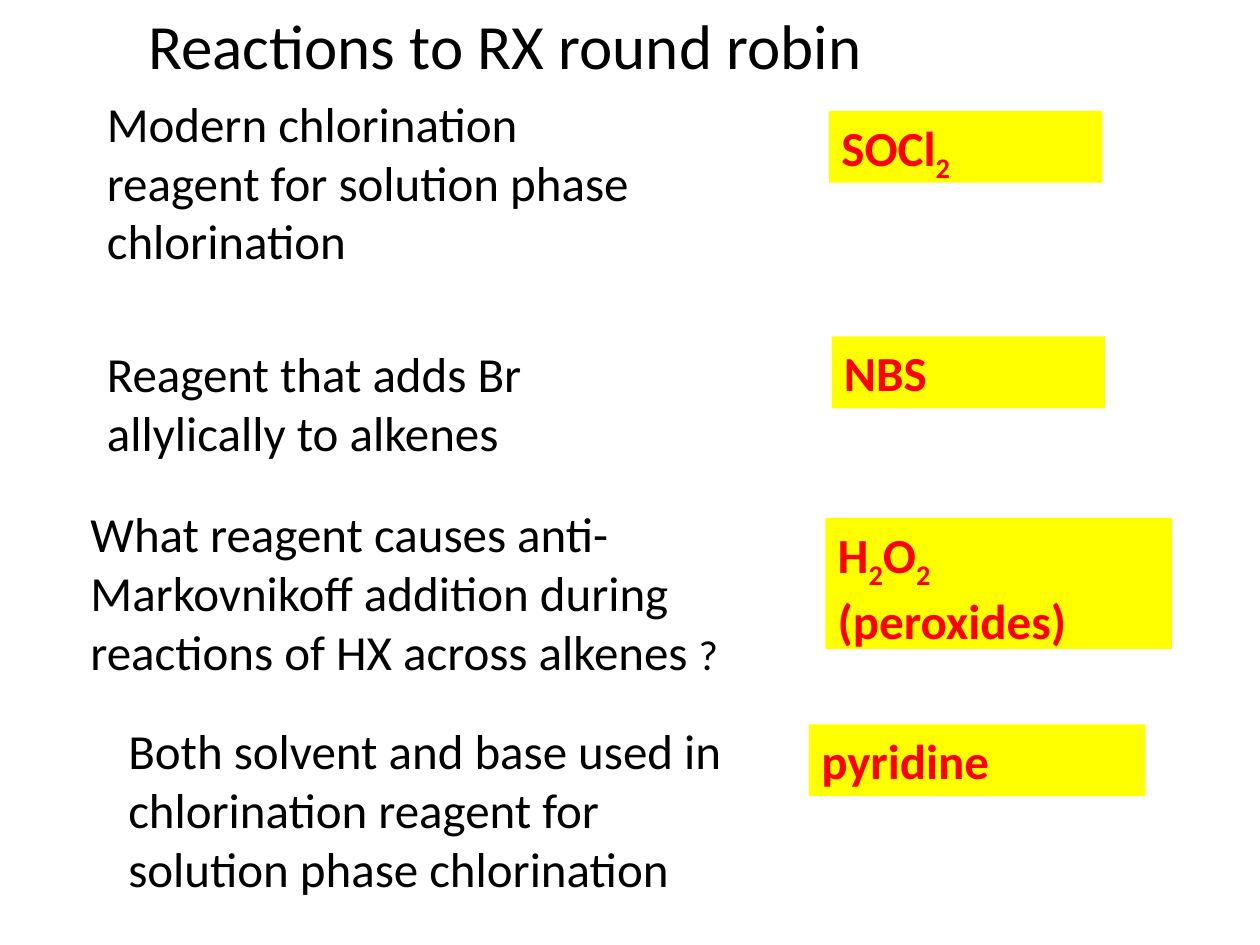
from dataclasses import dataclass

from pptx import Presentation
from pptx import util as u
from pptx.dml.color import RGBColor
from pptx.enum import shapes, text


@dataclass(frozen=True)
class Theme:
    font: str = "Calibri"
    ink: RGBColor = RGBColor(0, 0, 0)
    key: RGBColor = RGBColor(255, 0, 0)
    mark: RGBColor = RGBColor(255, 255, 0)
    head: int = 36
    body: int = 28
    small: int = 24


@dataclass(frozen=True)
class Run:
    words: str
    size: int
    sub: bool = False


@dataclass(frozen=True)
class Box:
    left: float
    top: float
    width: float
    height: float
    runs: tuple[Run, ...]

    def place(self) -> tuple[u.Length, ...]:
        sides = (self.left, self.top, self.width, self.height)
        return tuple(u.Inches(side) for side in sides)


LOOK = Theme()


def plain(words: str) -> Run:
    return Run(words, LOOK.body)


def low(words: str) -> Run:
    return Run(words, LOOK.body, sub=True)


# Slide content
TITLE = Box(1.08, 0, 6.83, 0.71, (Run("Reactions to RX round robin", LOOK.head),))

ASKS = (
    Box(0.75, 0.69, 4.5, 1.51,
        (plain("Modern chlorination reagent for solution phase chlorination"),)),
    Box(0.75, 2.68, 4.42, 1.04,
        (plain("Reagent that adds Br allylically to alkenes"),)),
    Box(0.62, 3.95, 5.46, 1.51,
        (plain("What reagent causes anti-Markovnikoff addition during "
               "reactions of HX across alkenes "), Run("?", LOOK.small))),
    Box(0.92, 5.67, 5, 1.51,
        (plain("Both solvent and base used in chlorination reagent for "
               "solution phase chlorination"),)),
)

KEYS = (
    Box(6.58, 0.88, 2.17, 0.57, (plain("SOCl"), low("2"))),
    Box(6.6, 2.67, 2.17, 0.57, (plain("NBS"),)),
    Box(6.55, 4.11, 2.75, 1.04,
        (plain("H"), low("2"), plain("O"), low("2"), plain(" (peroxides)"))),
    Box(6.42, 5.75, 2.67, 0.57, (plain("pyridine"),)),
)


def write(shape, runs: tuple[Run, ...], color: RGBColor, bold: bool) -> None:
    frame = shape.text_frame
    frame.word_wrap = True
    frame.auto_size = text.MSO_AUTO_SIZE.SHAPE_TO_FIT_TEXT
    frame.vertical_anchor = text.MSO_ANCHOR.TOP
    para = frame.paragraphs[0]
    para.alignment = text.PP_ALIGN.LEFT
    for item in runs:
        run = para.add_run()
        run.text = item.words
        font = run.font
        font.name, font.size, font.bold = LOOK.font, u.Pt(item.size), bold
        font.color.rgb = color
        if item.sub:
            run._r.get_or_add_rPr().set("baseline", "-25000")


def note(slide, box: Box) -> None:
    shape = slide.shapes.add_textbox(*box.place())
    write(shape, box.runs, LOOK.ink, False)


def answer(slide, box: Box) -> None:
    shape = slide.shapes.add_shape(shapes.MSO_SHAPE.RECTANGLE, *box.place())
    shape.shadow.inherit = False
    shape.fill.solid()
    shape.fill.fore_color.rgb = LOOK.mark
    shape.line.fill.background()
    write(shape, box.runs, LOOK.key, True)


def main() -> None:
    deck = Presentation()
    deck.slide_width, deck.slide_height = u.Inches(10), u.Inches(7.5)
    slide = deck.slides.add_slide(deck.slide_layouts[6])

    # Questions with their answers, then the title
    for ask, key in zip(ASKS, KEYS):
        note(slide, ask)
        answer(slide, key)
    note(slide, TITLE)

    deck.save("out.pptx")


if __name__ == "__main__":
    main()
